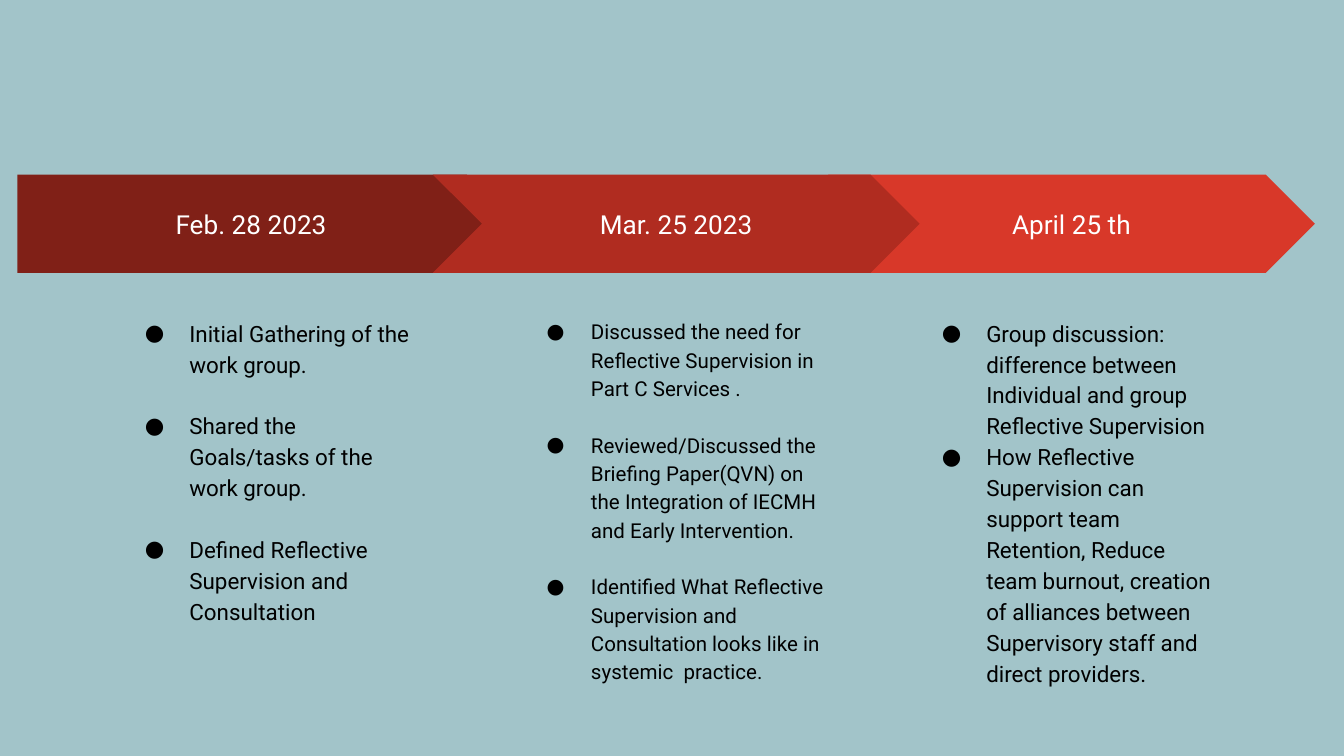
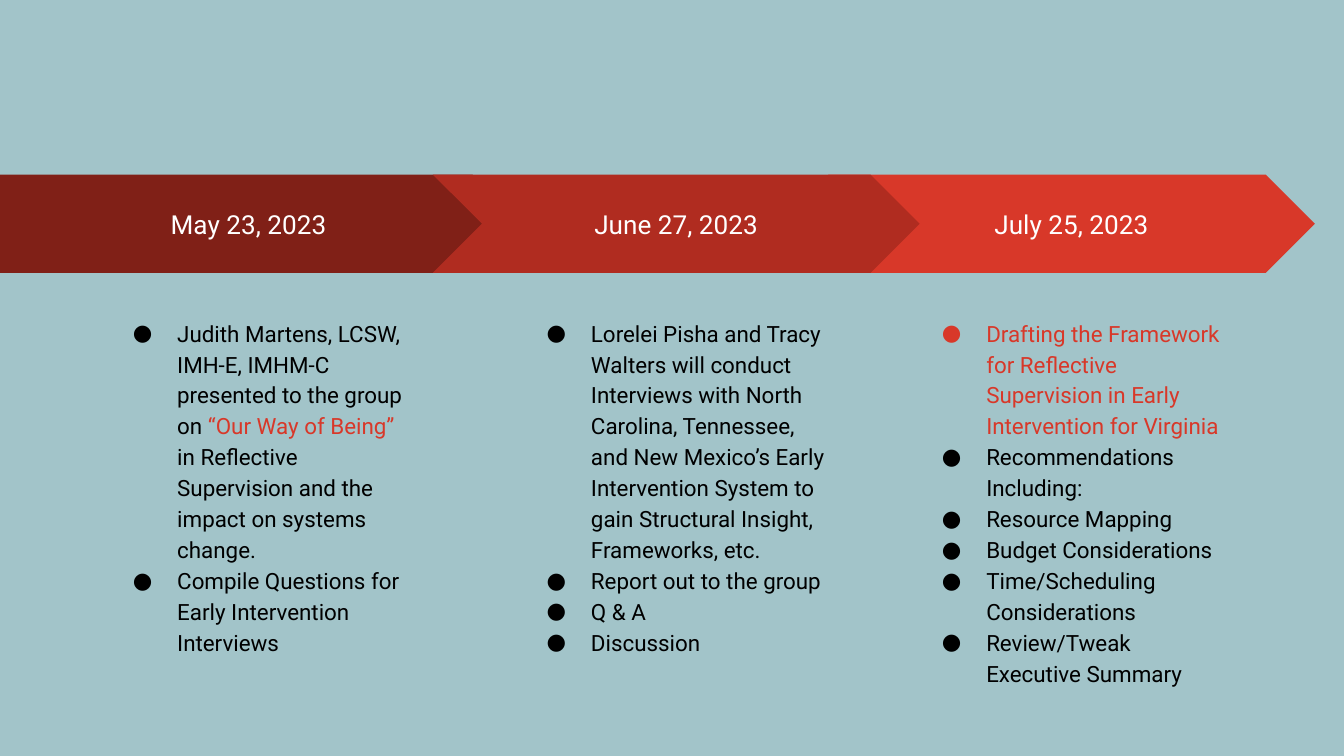
"""Build two slides of dated arrows with bullet lists beneath."""
from lxml.etree import SubElement
from pptx import Presentation
from pptx.dml.color import RGBColor
from pptx.enum.shapes import MSO_SHAPE
from pptx.enum.text import MSO_ANCHOR, PP_ALIGN
from pptx.oxml.ns import qn
from pptx.util import Cm, Pt

HUES = {
    "back": "A2C4C9",
    "dark": "802017",
    "mid": "B02C20",
    "red": "D83829",
    "ink": "000000",
    "white": "FFFFFF",
}
STEP = 7.47
MID = 8.18
LAST = MID + STEP
INSET = 1.47
WIDE = 6.22


class Deck:
    font = "Roboto"
    top, high = 3.3, 1.86
    list_top, list_high = 5.72, 7.26
    pad = 0.25

    def __init__(self):
        self.show = Presentation()
        self.show.slide_width = Cm(25.4)
        self.show.slide_height = Cm(14.29)
        self.slide = None

    def hue(self, name):
        return RGBColor.from_string(HUES[name])

    def page(self):
        self.slide = self.show.slides.add_slide(self.show.slide_layouts[6])
        fill = self.slide.background.fill
        fill.solid()
        fill.fore_color.rgb = self.hue("back")

    def frame(self, shape, anchor):
        text = shape.text_frame
        text.word_wrap = True
        text.vertical_anchor = anchor
        text.margin_left = text.margin_right = Cm(self.pad)
        text.margin_top = text.margin_bottom = Cm(self.pad)
        return text

    def run(self, para, words, size, hue):
        run = para.add_run()
        run.text = words
        run.font.name = self.font
        run.font.size = Pt(size)
        run.font.color.rgb = self.hue(hue)

    def arrow(self, group, kind, left, width, hue, date):
        shape = group.shapes.add_shape(
            kind, Cm(left), Cm(self.top), Cm(width), Cm(self.high))
        shape.adjustments[0] = 0.5
        shape.shadow.inherit = False
        shape.fill.solid()
        shape.fill.fore_color.rgb = self.hue(hue)
        shape.line.fill.background()
        para = self.frame(shape, MSO_ANCHOR.MIDDLE).paragraphs[0]
        para.alignment = PP_ALIGN.CENTER
        self.run(para, date, 14, "white")

    def bullet(self, para, hue):
        props = para._p.get_or_add_pPr()
        props.set("marL", str(Cm(1.27)))
        props.set("indent", str(-Cm(0.84)))
        tint = SubElement(props, qn("a:buClr"))
        SubElement(tint, qn("a:srgbClr"), val=HUES[hue])
        SubElement(props, qn("a:buFont"), typeface=self.font)
        SubElement(props, qn("a:buChar"), char="●")

    def points(self, group, left, width, items, size, gap):
        box = group.shapes.add_textbox(
            Cm(left), Cm(self.list_top), Cm(width), Cm(self.list_high))
        text = self.frame(box, MSO_ANCHOR.TOP)
        for rank, item in enumerate(items):
            runs = [(item, "ink")] if isinstance(item, str) else item
            para = text.paragraphs[0] if rank == 0 else text.add_paragraph()
            para.line_spacing = 1.15
            para.space_before = Pt(0)
            para.space_after = Pt(gap if rank < len(items) - 1 else 0)
            self.bullet(para, runs[0][1])
            for words, hue in runs:
                self.run(para, words, size, hue)

    def stage(self, kind, arrow, hue, date, body, items, size=12, gap=0):
        group = self.slide.shapes.add_group_shape()
        self.arrow(group, kind, *arrow, hue, date)
        self.points(group, *body, items, size, gap)

    def first(self, arrow, body, date, items, **style):
        self.stage(MSO_SHAPE.PENTAGON, arrow, "dark", date, body, items, **style)

    def later(self, left, hue, date, items, **style):
        self.stage(MSO_SHAPE.CHEVRON, (left, 9.2), hue, date,
                   (left + INSET, WIDE), items, **style)


def main():
    deck = Deck()

    deck.page()
    deck.later(LAST, "red", "April 25 th", [
        "Group discussion: difference between Individual and group "
        "Reflective Supervision",
        "How Reflective Supervision can support team Retention, Reduce team "
        "burnout, creation of alliances between Supervisory staff and direct "
        "providers.",
    ])
    deck.first((0.33, 9.42), (2.06, 5.94), "Feb. 28 2023 ", [
        "Initial Gathering of the work group.",
        "Shared the Goals/tasks of the work group.",
        "Defined Reflective Supervision and Consultation",
    ], gap=16.5)
    deck.later(MID, "mid", "Mar. 25 2023", [
        "Discussed the need for Reflective Supervision in Part C Services .",
        "Reviewed/Discussed the Briefing Paper(QVN) on the Integration of "
        "IECMH and Early Intervention.",
        "Identified What Reflective Supervision and Consultation looks like "
        "in systemic  practice.",
    ], size=11, gap=15.2)

    deck.page()
    deck.later(LAST, "red", "July 25, 2023", [
        [("Drafting the Framework for Reflective Supervision in Early "
          "Intervention for Virginia", "red")],
        "Recommendations Including:",
        "Resource Mapping",
        "Budget Considerations",
        "Time/Scheduling Considerations",
        "Review/Tweak Executive Summary",
    ])
    deck.first((0, 9.86), (1.83, WIDE), "May 23, 2023", [
        [("Judith Martens, LCSW, IMH-E, IMHM-C presented to the group on ", "ink"),
         ("“Our Way of Being”", "red"),
         (" in Reflective Supervision and the impact on systems change.", "ink")],
        "Compile Questions for Early Intervention Interviews",
    ])
    deck.later(MID, "mid", "June 27, 2023", [
        "Lorelei Pisha and Tracy Walters will conduct Interviews with North "
        "Carolina, Tennessee, and New Mexico’s Early Intervention System to "
        "gain Structural Insight, Frameworks, etc.",
        "Report out to the group",
        "Q & A",
        "Discussion",
    ])

    deck.show.save("out.pptx")


if __name__ == "__main__":
    main()
